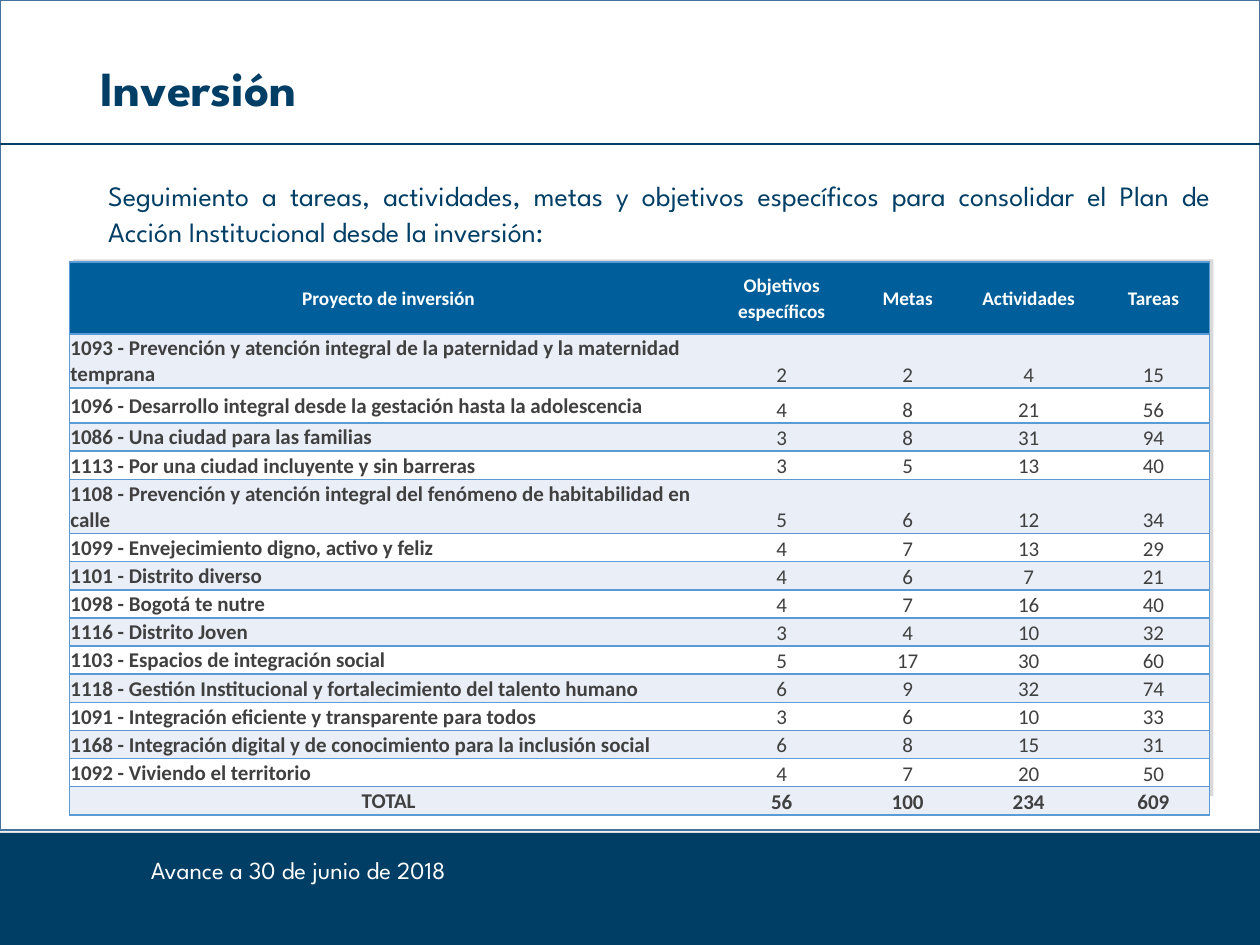
"""Build the investment follow-up slide with its project table."""
from lxml import etree
from pptx import Presentation
from pptx.dml.color import RGBColor
from pptx.enum.shapes import MSO_CONNECTOR, MSO_SHAPE
from pptx.enum.text import MSO_ANCHOR, PP_ALIGN
from pptx.oxml.ns import qn
from pptx.util import Pt

RECTANGLE = MSO_SHAPE.RECTANGLE
STRAIGHT = MSO_CONNECTOR.STRAIGHT
TOP, MIDDLE, BOTTOM = MSO_ANCHOR.TOP, MSO_ANCHOR.MIDDLE, MSO_ANCHOR.BOTTOM
LEFT, CENTER, JUSTIFY = PP_ALIGN.LEFT, PP_ALIGN.CENTER, PP_ALIGN.JUSTIFY
NAVY, BLUE, BORDER = "003E65", "005F9A", "5B9BD5"
WHITE, BAND, DARK_GRAY = "FFFFFF", "EAEFF7", "404040"

HEADERS = ["Proyecto de inversión", "Objetivos específicos", "Metas", "Actividades", "Tareas"]
PROJECTS = [
    ("1093 - Prevención y atención integral de la paternidad y la maternidad temprana", 2, 2, 4, 15),
    ("1096 - Desarrollo integral desde la gestación hasta la adolescencia", 4, 8, 21, 56),
    ("1086 - Una ciudad para las familias", 3, 8, 31, 94),
    ("1113 - Por una ciudad incluyente y sin barreras", 3, 5, 13, 40),
    ("1108 - Prevención y atención integral del fenómeno de habitabilidad en calle", 5, 6, 12, 34),
    ("1099 - Envejecimiento digno, activo y feliz", 4, 7, 13, 29),
    ("1101 - Distrito diverso", 4, 6, 7, 21),
    ("1098 - Bogotá te nutre", 4, 7, 16, 40),
    ("1116 - Distrito Joven", 3, 4, 10, 32),
    ("1103 - Espacios de integración social", 5, 17, 30, 60),
    ("1118 - Gestión Institucional y fortalecimiento del talento humano", 6, 9, 32, 74),
    ("1091 - Integración eficiente y transparente para todos", 3, 6, 10, 33),
    ("1168 - Integración digital y de conocimiento para la inclusión social", 6, 8, 15, 31),
    ("1092 - Viviendo el territorio", 4, 7, 20, 50),
]
TOTALS = ("TOTAL", 56, 100, 234, 609)
COLUMN_WIDTHS = [365, 84.2, 59.8, 78.5, 64.1]
ROW_HEIGHT = 16.1
SPECIAL_HEIGHTS = {0: 41, 1: 31, 2: 20, 5: 31}


def color(value):
    return RGBColor.from_string(value)


def write(frame, text, font, size, value, bold, align, spacing=1.0):
    frame.text = text
    para = frame.paragraphs[0]
    para.alignment = align
    para.line_spacing = spacing
    span = para.runs[0]
    span.font.name = font
    span.font.size = Pt(size)
    span.font.bold = bold
    span.font.color.rgb = color(value)


deck = Presentation()
deck.slide_width, deck.slide_height = Pt(720), Pt(540)
page = deck.slides.add_slide(deck.slide_layouts[6])

for left, top, width, height, fill, outline in [
    (0, 0, 720, 535, "F2F2F2", None),
    (0, 476, 720, 64, NAVY, None),
    (0, 0, 720, 474.5, WHITE, "43739E"),
    (41.8, 148.3, 651.6, 306.7, "D9D9D9", None),
]:
    panel = page.shapes.add_shape(RECTANGLE, Pt(left), Pt(top), Pt(width), Pt(height))
    panel.shadow.inherit = False
    panel.fill.solid()
    panel.fill.fore_color.rgb = color(fill)
    if outline:
        panel.line.color.rgb = color(outline)
        panel.line.width = Pt(1)
    else:
        panel.line.fill.background()

for left, top, width, height, text, size, value, bold, align, anchor, spacing in [
    (61.5, 480.2, 218, 28.8, "Avance a 30 de junio de 2018", 14, WHITE, False, CENTER, BOTTOM, 1.0),
    (50.4, 27.4, 620.6, 48.2, "Inversión", 28, NAVY, True, LEFT, MIDDLE, 0.9),
    (54.7, 97.2, 644.4, 46.8,
     "Seguimiento a tareas, actividades, metas y objetivos específicos para consolidar "
     "el Plan de Acción Institucional desde la inversión:",
     16, NAVY, False, JUSTIFY, TOP, 1.07),
]:
    box = page.shapes.add_textbox(Pt(left), Pt(top), Pt(width), Pt(height))
    box.text_frame.word_wrap = True
    box.text_frame.vertical_anchor = anchor
    write(box.text_frame, text, "League Spartan", size, value, bold, align, spacing)

rule = page.shapes.add_connector(STRAIGHT, Pt(720), Pt(82.1), Pt(0), Pt(82.1))
rule.line.color.rgb = color(NAVY)
rule.line.width = Pt(1)
etree.SubElement(rule._element.spPr, qn("a:effectLst"))

rows = [HEADERS, *PROJECTS, TOTALS]
heights = [SPECIAL_HEIGHTS.get(index, ROW_HEIGHT) for index in range(len(rows))]
table = page.shapes.add_table(
    len(rows), len(HEADERS), Pt(39.6), Pt(149.8), Pt(sum(COLUMN_WIDTHS)), Pt(sum(heights))
).table
table.first_row = False
table.horz_banding = False
for column, width in zip(table.columns, COLUMN_WIDTHS):
    column.width = Pt(width)

last_row, last_column = len(rows) - 1, len(HEADERS) - 1
for row_index, values in enumerate(rows):
    table.rows[row_index].height = Pt(heights[row_index])
    is_header, is_total = row_index == 0, row_index == last_row
    fill = BLUE if is_header else BAND if row_index % 2 else WHITE
    for column_index, value in enumerate(values):
        cell = table.cell(row_index, column_index)
        is_name = column_index == 0
        is_label = is_header or (is_name and is_total)
        side_margin = 3.6 if is_label else 0.7 if is_name else 0
        cell.margin_left = cell.margin_right = Pt(side_margin)
        cell.margin_top = Pt(0.7 if is_name and not is_label else 0)
        cell.margin_bottom = Pt(0)
        cell.vertical_anchor = MIDDLE if is_header or is_name else BOTTOM
        write(
            cell.text_frame, str(value), "Calibri",
            11 if is_header else 12,
            WHITE if is_header else DARK_GRAY,
            is_header or is_total or is_name,
            LEFT if is_name and not is_label else CENTER,
            1.07 if is_label else 1.0,
        )
        properties = cell._tc.get_or_add_tcPr()
        sides = {"L": is_name, "R": column_index == last_column, "T": True, "B": True}
        for side, visible in sides.items():
            edge = etree.SubElement(properties, qn(f"a:ln{side}"), w=str(Pt(1)))
            if visible:
                paint = etree.SubElement(edge, qn("a:solidFill"))
                etree.SubElement(paint, qn("a:srgbClr"), val=BORDER)
            else:
                etree.SubElement(edge, qn("a:noFill"))
        cell.fill.solid()
        cell.fill.fore_color.rgb = color(fill)

deck.save("out.pptx")
